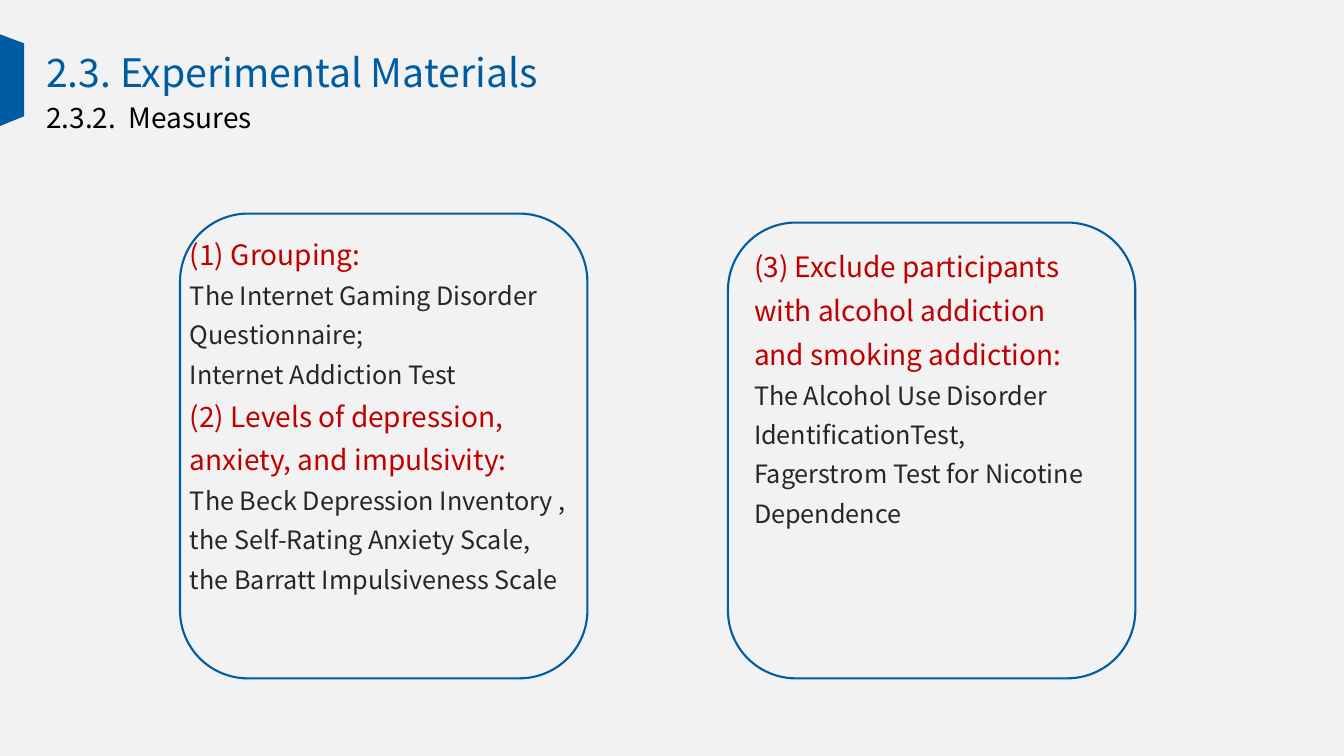
import pptx
import pptx.dml.color
import pptx.enum.shapes
import pptx.util

Pt = pptx.util.Pt
RGBColor = pptx.dml.color.RGBColor

BLUE = RGBColor(0x00, 0x5C, 0xA2)
RED = RGBColor(0xC0, 0x00, 0x00)
DARK_GREY = RGBColor(0x26, 0x26, 0x26)
BLACK = RGBColor(0x00, 0x00, 0x00)
LIGHT_GREY = RGBColor(0xF2, 0xF2, 0xF2)
FONT = "Noto Sans CJK SC"

HEADING = (20, RED)
BODY = (18, DARK_GREY)

GROUPING_AND_LEVELS = [
    ("(1) Grouping:", HEADING),
    ("The Internet Gaming Disorder Questionnaire;", BODY),
    ("Internet Addiction Test", BODY),
    ("(2) Levels of depression,", HEADING),
    ("anxiety, and impulsivity:", HEADING),
    ("The Beck Depression Inventory , the Self-Rating Anxiety Scale,", BODY),
    ("the Barratt Impulsiveness Scale", BODY),
]
EXCLUSION = [
    ("(3) Exclude participants with alcohol addiction and smoking addiction:", HEADING),
    ("The Alcohol Use Disorder IdentificationTest,", BODY),
    ("Fagerstrom Test for Nicotine Dependence", BODY),
]


def add_text(slide, left, top, width, height, lines, line_spacing=None):
    """Add a text box; each line is its wording and a (size, colour) style."""
    box = slide.shapes.add_textbox(Pt(left), Pt(top), Pt(width), Pt(height))
    frame = box.text_frame
    frame.word_wrap = True
    frame.text = "\n".join(wording for wording, style in lines)
    for para, (wording, (size, colour)) in zip(frame.paragraphs, lines):
        para.line_spacing = line_spacing
        for span in para.runs:
            span.font.name = FONT
            span.font.size = Pt(size)
            span.font.color.rgb = colour


def add_panel(slide, left, top, width, height):
    panel = slide.shapes.add_shape(
        pptx.enum.shapes.MSO_SHAPE.ROUNDED_RECTANGLE,
        Pt(left), Pt(top), Pt(width), Pt(height))
    panel.shadow.inherit = False
    panel.fill.background()
    panel.line.color.rgb = BLUE
    panel.line.width = Pt(1.5)


def add_side_tab(slide):
    """Add the blue tab with slanted ends at the left edge."""
    builder = slide.shapes.build_freeform(Pt(0), Pt(24.5))
    builder.add_line_segments(
        [(Pt(17.3), Pt(31)), (Pt(17.3), Pt(83)), (Pt(0), Pt(90))], close=True)
    tab = builder.convert_to_shape()
    tab.shadow.inherit = False
    tab.fill.solid()
    tab.fill.fore_color.rgb = BLUE
    tab.line.fill.background()


def main():
    deck = pptx.Presentation()
    deck.slide_width, deck.slide_height = Pt(960), Pt(540)
    slide = deck.slides.add_slide(deck.slide_layouts[6])
    slide.background.fill.solid()
    slide.background.fill.fore_color.rgb = LIGHT_GREY

    add_side_tab(slide)
    add_text(slide, 26, 31, 374, 41, [("2.3. Experimental Materials", (28, BLUE))])
    add_text(slide, 26, 68.4, 374, 32, [("2.3.2.  Measures", (20, BLACK))])

    add_panel(slide, 128.6, 152.6, 291, 332)
    add_text(slide, 128.6, 159, 298, 338, GROUPING_AND_LEVELS, 1.3)
    add_panel(slide, 520, 159, 291, 325.6)
    add_text(slide, 531.5, 167.8, 262, 234, EXCLUSION, 1.3)

    deck.save("out.pptx")


if __name__ == "__main__":
    main()
